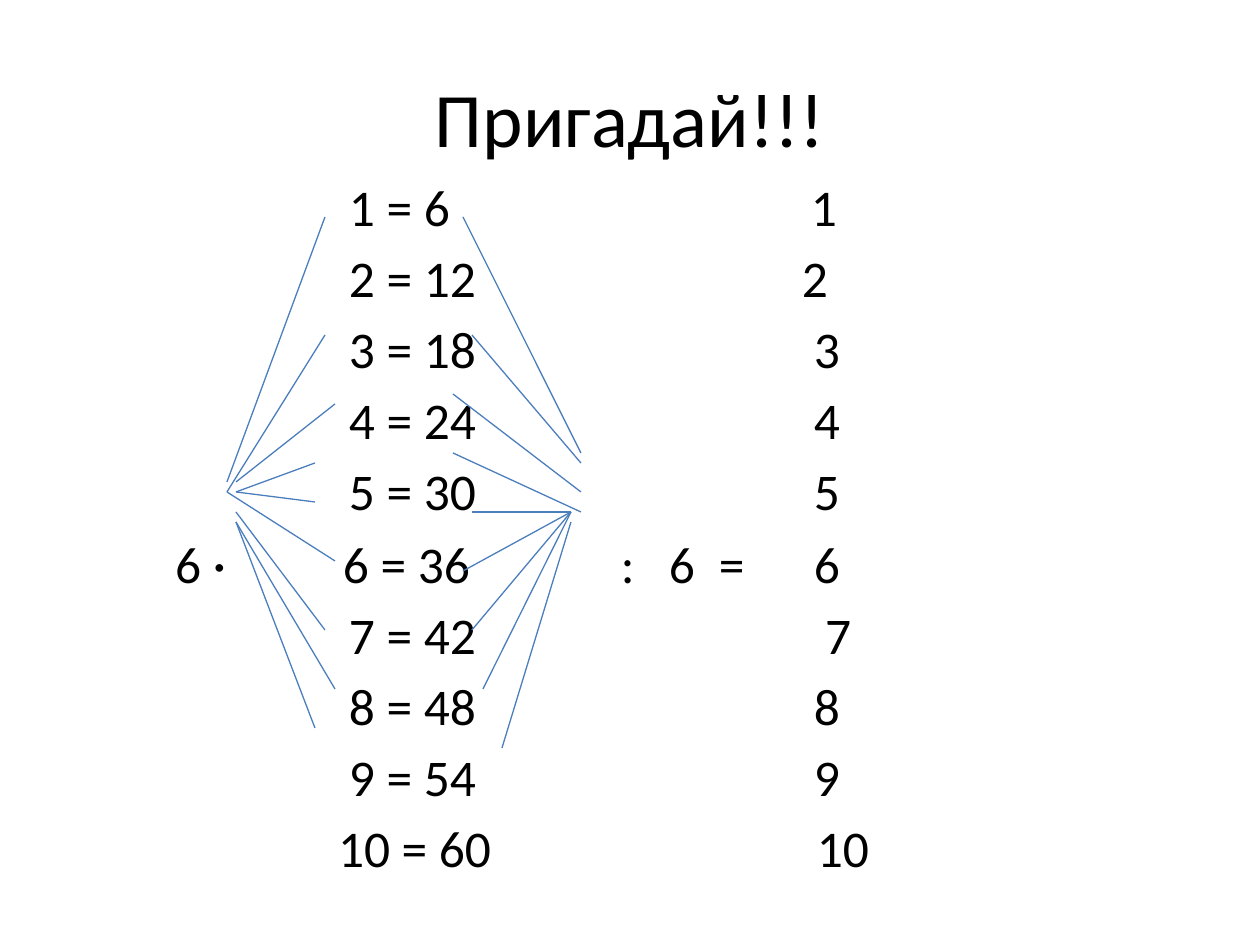
import pptx
import pptx.dml.color
import pptx.enum.shapes
import pptx.enum.text
import pptx.oxml.ns
import pptx.util
from lxml import etree

EMU_PER_PX = 914400 // 126
COLORS = {"text": "000000", "line": "4B7EBC"}
FONT = "Calibri"
BODY_PT, DOT_PT, TITLE_PT = 29.4, 30.8, 44
INSET_X = 13

# Each row lists (x, text); the x values become tab stops.
ROWS = [
    [(349, "1 = 6"), (811, "1")],
    [(349, "2 = 12"), (802, "2")],
    [(349, "3 = 18"), (814, "3")],
    [(349, "4 = 24"), (814, "4")],
    [(349, "5 = 30"), (814, "5")],
    [(175, "6 ·"), (343, "6 = 36"), (621, ":"), (669, "6"), (719, "="), (814, "6")],
    [(349, "7 = 42"), (825, "7")],
    [(349, "8 = 48"), (814, "8")],
    [(349, "9 = 54"), (814, "9")],
    [(338, "10 = 60"), (817, "10")],
]

MULTIPLY_LINES = [
    (227, 482, 325, 217), (227, 492, 325, 335), (236, 482, 335, 404),
    (236, 492, 315, 463), (236, 492, 315, 502), (227, 492, 335, 561),
    (236, 512, 325, 630), (236, 522, 335, 689), (236, 522, 315, 728),
]
DIVIDE_LINES = [
    (463, 217, 581, 453), (472, 335, 581, 463), (453, 394, 581, 492),
    (453, 453, 581, 512), (472, 512, 571, 512), (463, 571, 571, 512),
    (472, 630, 571, 512), (483, 689, 571, 512), (502, 748, 571, 522),
]


def px(n):
    return pptx.util.Emu(n * EMU_PER_PX)


def rgb(name):
    return pptx.dml.color.RGBColor.from_string(COLORS[name])


class Deck:
    def __init__(self, width, height):
        self.prs = pptx.Presentation()
        self.prs.slide_width, self.prs.slide_height = px(width), px(height)
        self.s = self.prs.slides.add_slide(self.prs.slide_layouts[6])

    def box(self, x, y, w, h):
        tf = self.s.shapes.add_textbox(px(x), px(y), px(w), px(h)).text_frame
        tf.word_wrap = True
        tf.margin_left = tf.margin_right = px(INSET_X)
        return tf

    def run(self, p, text, size):
        r = p.add_run()
        r.text = text
        r.font.name = FONT
        r.font.size = pptx.util.Pt(size)
        r.font.color.rgb = rgb("text")

    def title(self, x, y, w, h, text):
        tf = self.box(x, y, w, h)
        tf.vertical_anchor = pptx.enum.text.MSO_ANCHOR.MIDDLE
        p = tf.paragraphs[0]
        p.alignment = pptx.enum.text.PP_ALIGN.CENTER
        self.run(p, text, TITLE_PT)

    def tabs(self, p, stops):
        qn = pptx.oxml.ns.qn
        tab_list = etree.SubElement(p._p.get_or_add_pPr(), qn("a:tabLst"))
        for stop in stops:
            etree.SubElement(tab_list, qn("a:tab"), pos=str(px(stop)), algn="l")

    def rows(self, x, y, w, h, rows):
        tf = self.box(x, y, w, h)
        for i, row in enumerate(rows):
            p = tf.add_paragraph() if i else tf.paragraphs[0]
            self.tabs(p, [left - x - INSET_X for left, _ in row])
            p.space_before = pptx.util.Pt(5.25 if i else 0)
            for _, text in row:
                head, dot, _ = text.partition("·")
                self.run(p, "\t" + head, BODY_PT)
                if dot:
                    self.run(p, dot, DOT_PT)

    def line(self, x1, y1, x2, y2):
        kind = pptx.enum.shapes.MSO_CONNECTOR.STRAIGHT
        c = self.s.shapes.add_connector(kind, px(x1), px(y1), px(x2), px(y2))
        c.line.color.rgb = rgb("line")
        c.line.width = pptx.util.Pt(0.75)
        etree.SubElement(c._element.spPr, pptx.oxml.ns.qn("a:effectLst"))


def main():
    deck = Deck(1260, 945)
    deck.title(63, 38, 1134, 158, "Пригадай!!!")
    deck.rows(69, 169, 1191, 776, ROWS)
    for ends in MULTIPLY_LINES + DIVIDE_LINES:
        deck.line(*ends)
    deck.prs.save("out.pptx")


if __name__ == "__main__":
    main()
